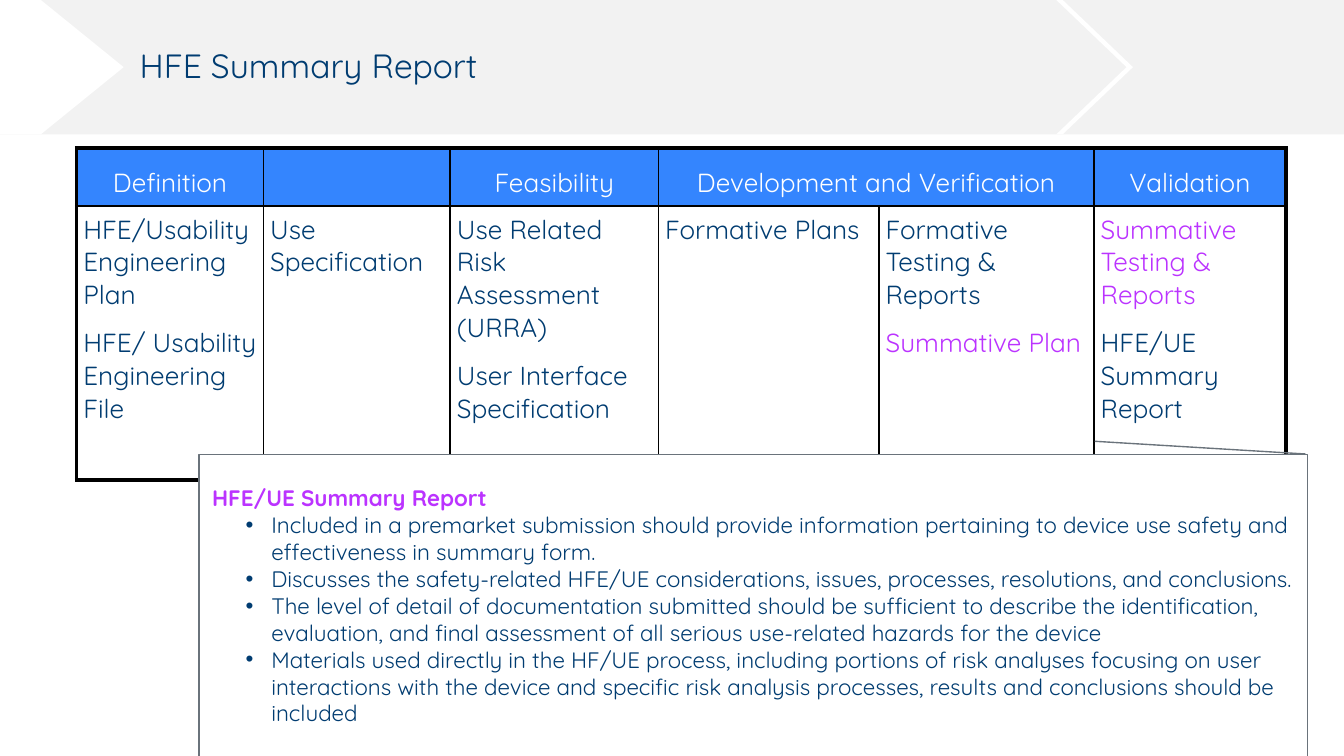
from pptx import Presentation
from pptx.dml.color import RGBColor as RGB
from pptx.enum.shapes import MSO_SHAPE as Shape
from pptx.enum.text import MSO_ANCHOR as Anchor, PP_ALIGN as Align
from pptx.oxml import parse_xml
from pptx.oxml.ns import nsdecls
from pptx.util import Inches, Pt

# Content
COLORS = {"navy": "003C71", "pink": "BB33FF", "blue": "3485FE", "white": "FFFFFF",
          "band": "F2F2F2", "gray": "6A737B", "black": "000000"}
FONT = "Quicksand"
TITLE = "HFE Summary Report"
HEADS = ["Definition", "", "Feasibility", "Development and Verification", "", "Validation"]
BODY = [
    [("HFE/Usability Engineering Plan", "navy"), ("HFE/ Usability Engineering File", "navy")],
    [("Use Specification", "navy")],
    [("Use Related Risk Assessment (URRA)", "navy"), ("User Interface Specification", "navy")],
    [("Formative Plans", "navy")],
    [("Formative Testing & Reports", "navy"), ("Summative Plan", "pink")],
    [("Summative Testing & Reports", "pink"), ("HFE/UE Summary Report", "navy")],
]
NOTE = "HFE/UE Summary Report"
POINTS = [
    "Included in a premarket submission should provide information pertaining to device use "
    "safety and effectiveness in summary form.",
    "Discusses the safety-related HFE/UE considerations, issues, processes, resolutions, "
    "and conclusions.",
    "The level of detail of documentation submitted should be sufficient to describe the "
    "identification, evaluation, and final assessment of all serious use-related hazards "
    "for the device",
    "Materials used directly in the HF/UE process, including portions of risk analyses "
    "focusing on user interactions with the device and specific risk analysis processes, "
    "results and conclusions should be included",
]

# Layout in inches, on a 16:9 slide
WIDE = 10
HIGH = WIDE * 9 / 16
COLS = [1.39, 1.39, 1.55, 1.64, 1.6, 1.43]
ROWS = [0.43, 2.04]
LEFT, TOP = 0.57, 1.1
THIN, THICK = 1, 2.25
BANDS = [  # kind, left, width, colour, adjustment
    (Shape.RECTANGLE, 0, WIDE, "band", None),
    (Shape.CHEVRON, 7.86, 0.57, "white", 0.917),
    (Shape.PENTAGON, 0, 0.92, "white", 0.67),
]


def tint(name):
    return RGB.from_string(COLORS[name])


def write(para, text, size, color, bold=False):
    run = para.add_run()
    run.text = text
    font = run.font
    font.name, font.size, font.bold = FONT, Pt(size), bold
    font.color.rgb = tint(color)


def draw(slide, kind, box, fill, line=None):
    shape = slide.shapes.add_shape(kind, *map(Inches, box))
    shape.shadow.inherit = False
    shape.fill.solid()
    shape.fill.fore_color.rgb = tint(fill)
    if line:
        shape.line.color.rgb = tint(line)
        shape.line.width = Pt(0.75)
    else:
        shape.line.fill.background()
    return shape


def edge(cell, row, col):
    outer = {"L": col == 0, "R": col == len(COLS) - 1,
             "T": row == 0, "B": row == len(ROWS) - 1}
    props = cell._tc.get_or_add_tcPr()
    for side, rim in outer.items():
        props.append(parse_xml(
            f'<a:ln{side} {nsdecls("a")} w="{Pt(THICK if rim else THIN)}"><a:solidFill>'
            f'<a:srgbClr val="{COLORS["black"]}"/></a:solidFill></a:ln{side}>'))


def bullet(para):
    props = para._p.get_or_add_pPr()
    props.set("marL", str(Inches(0.44)))
    props.set("indent", str(Inches(-0.19)))
    for part in (f'<a:buClr {nsdecls("a")}><a:srgbClr val="{COLORS["navy"]}"/></a:buClr>',
                 f'<a:buFont {nsdecls("a")} typeface="Arial"/>',
                 f'<a:buChar {nsdecls("a")} char="•"/>'):
        props.append(parse_xml(part))


def add_header(slide):
    for kind, left, width, color, adj in BANDS:
        shape = draw(slide, kind, (left, 0, width, 1), color)
        if adj:
            shape.adjustments[0] = adj
    box = slide.shapes.add_textbox(*map(Inches, (0.94, 0.23, 8.69, 0.55)))
    frame = box.text_frame
    frame.word_wrap = True
    frame.vertical_anchor = Anchor.MIDDLE
    para = frame.paragraphs[0]
    para.line_spacing = 0.9
    write(para, TITLE, 18, "navy")


def add_phases(slide):
    size = (LEFT, TOP, sum(COLS), sum(ROWS))
    table = slide.shapes.add_table(len(ROWS), len(COLS), *map(Inches, size)).table
    for col, width in zip(table.columns, COLS):
        col.width = Inches(width)
    for row, height in zip(table.rows, ROWS):
        row.height = Inches(height)
    table.cell(0, 3).merge(table.cell(0, 4))
    heads = [[(text, "white")] if text else [] for text in HEADS]
    for r, line in enumerate([heads, BODY]):
        for c, items in enumerate(line):
            cell = table.cell(r, c)
            edge(cell, r, c)
            cell.fill.solid()
            cell.fill.fore_color.rgb = tint("white" if r else "blue")
            cell.margin_left = cell.margin_right = Inches(0.05)
            cell.margin_top = cell.margin_bottom = Inches(0.05)
            frame = cell.text_frame
            for i, (text, color) in enumerate(items):
                para = frame.add_paragraph() if i else frame.paragraphs[0]
                if r:
                    para.space_after = Pt(8.4)
                else:
                    para.alignment = Align.CENTER
                    para.line_spacing = Pt(24)
                write(para, text, 14, color)


def add_note(slide):
    shape = draw(slide, Shape.LINE_CALLOUT_1, (1.48, 3.38, 8.25, 2.25), "white", "gray")
    for i, adj in enumerate((-0.001, 0.998, -0.043, 0.808)):
        shape.adjustments[i] = adj
    frame = shape.text_frame
    frame.word_wrap = True
    frame.vertical_anchor = Anchor.MIDDLE
    head = frame.paragraphs[0]
    head.alignment = Align.LEFT
    write(head, NOTE, 12, "pink", True)
    for text in POINTS:
        para = frame.add_paragraph()
        para.level = 1
        para.alignment = Align.LEFT
        bullet(para)
        write(para, text, 12, "navy")


def main():
    deck = Presentation()
    deck.slide_width, deck.slide_height = Inches(WIDE), Inches(HIGH)
    slide = deck.slides.add_slide(deck.slide_layouts[6])
    add_header(slide)
    add_phases(slide)
    add_note(slide)
    deck.save("out.pptx")


if __name__ == "__main__":
    main()
